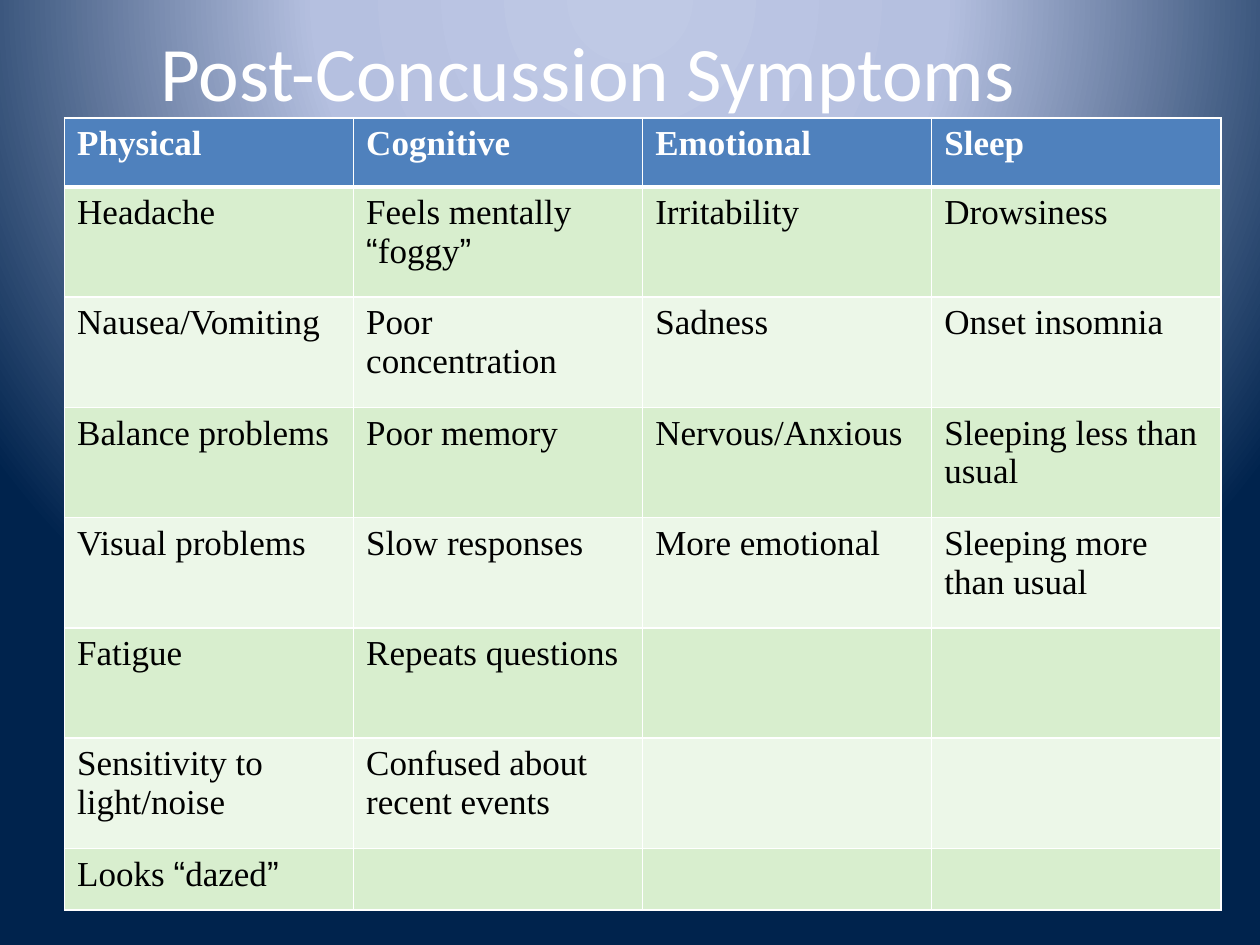
from dataclasses import dataclass
from itertools import groupby

from lxml.etree import SubElement
from pptx import Presentation
from pptx.dml.color import RGBColor
from pptx.enum.text import MSO_ANCHOR, MSO_AUTO_SIZE, PP_ALIGN
from pptx.oxml.ns import qn
from pptx.util import Pt


@dataclass(frozen=True)
class Theme:
    """Colours, fonts and type sizes of the slide."""
    glow: tuple = ((0, "BFC9E5"), (40, "B5C0E0"), (100, "00234D"))
    light: str = "FFFFFF"
    dark: str = "000000"
    header: str = "4F81BD"
    bands: tuple = ("D8EECE", "ECF7E8")
    title_font: str = "Calibri"
    body_font: str = "Times New Roman"
    quote_font: str = "Arial"
    title_size: int = 44
    body_size: int = 20
    thin: int = 1
    thick: int = 3


class SlideBuilder:
    """Draws themed elements on the current slide."""

    def __init__(self, slide, theme):
        self.slide = slide
        self.theme = theme

    def style(self, font, face, size, color, bold=False):
        font.name = face
        font.size = Pt(size)
        font.bold = bold
        font.color.rgb = RGBColor.from_string(color)

    def background(self):
        """Fill the background with a glow centred above the top edge."""
        self.slide.background.fill.gradient()
        gradient = next(self.slide.element.iter(qn("a:gradFill")))
        for part in list(gradient):
            gradient.remove(part)
        stops = SubElement(gradient, qn("a:gsLst"))
        for position, color in self.theme.glow:
            stop = SubElement(stops, qn("a:gs"), pos=str(position * 1000))
            SubElement(stop, qn("a:srgbClr"), val=color)
        circle = SubElement(gradient, qn("a:path"), {"path": "circle"})
        SubElement(circle, qn("a:fillToRect"), l="50000", t="-80000", r="50000", b="180000")

    def title(self, text, left, top, width, height):
        heading = self.slide.shapes.title
        heading.left, heading.top = Pt(left), Pt(top)
        heading.width, heading.height = Pt(width), Pt(height)
        frame = heading.text_frame
        frame.text = text
        frame.word_wrap = True
        frame.auto_size = MSO_AUTO_SIZE.NONE
        frame.vertical_anchor = MSO_ANCHOR.BOTTOM
        frame.margin_top = frame.margin_bottom = 0
        line = frame.paragraphs[0]
        line.alignment = PP_ALIGN.CENTER
        self.style(line.runs[0].font, self.theme.title_font, self.theme.title_size, self.theme.light)

    def border(self, cell, side, weight):
        edge = SubElement(cell._tc.get_or_add_tcPr(), qn(f"a:ln{side}"), w=str(Pt(weight)))
        fill = SubElement(edge, qn("a:solidFill"))
        SubElement(fill, qn("a:srgbClr"), val=self.theme.light)

    def cell(self, cell, text, row):
        """Write one cell, setting curly quotes in their own font."""
        theme = self.theme
        header = row == 0
        weights = {"L": theme.thin, "R": theme.thin,
                   "T": theme.thick if row == 1 else theme.thin,
                   "B": theme.thick if header else theme.thin}
        for side, weight in weights.items():
            self.border(cell, side, weight)
        cell.fill.solid()
        band = theme.header if header else theme.bands[(row - 1) % 2]
        cell.fill.fore_color.rgb = RGBColor.from_string(band)
        line = cell.text_frame.paragraphs[0]
        line.font.size = Pt(theme.body_size)
        for quoted, letters in groupby(text, key=lambda letter: letter in "“”"):
            run = line.add_run()
            run.text = "".join(letters)
            self.style(run.font, theme.quote_font if quoted else theme.body_font,
                       theme.body_size, theme.light if header else theme.dark, header)

    def table(self, columns, left, top, column_width, row_heights):
        count = len(row_heights)
        grid = self.slide.shapes.add_table(
            count, len(columns), Pt(left), Pt(top),
            Pt(column_width * len(columns)), Pt(sum(row_heights))).table
        for row, height in zip(grid.rows, row_heights):
            row.height = Pt(height)
        for index, entries in enumerate(columns):
            grid.columns[index].width = Pt(column_width)
            padded = entries + [""] * (count - len(entries))
            for row, text in enumerate(padded):
                self.cell(grid.cell(row, index), text, row)


SYMPTOMS = [
    ["Physical", "Headache", "Nausea/Vomiting", "Balance problems", "Visual problems",
     "Fatigue", "Sensitivity to light/noise", "Looks “dazed”"],
    ["Cognitive", "Feels mentally “foggy”", "Poor concentration", "Poor memory",
     "Slow responses", "Repeats questions", "Confused about recent events"],
    ["Emotional", "Irritability", "Sadness", "Nervous/Anxious", "More emotional"],
    ["Sleep", "Drowsiness", "Onset insomnia", "Sleeping less than usual",
     "Sleeping more than usual"],
]


def main():
    deck = Presentation()
    deck.slide_width, deck.slide_height = Pt(720), Pt(540)
    builder = SlideBuilder(deck.slides.add_slide(deck.slide_layouts[5]), Theme())
    builder.background()
    builder.title("Post-Concussion Symptoms", 0, 8, 672, 59)
    builder.table(SYMPTOMS, 36.9, 67.5, 165.2, [39.4] + [63] * 6 + [35.2])
    deck.save("out.pptx")


if __name__ == "__main__":
    main()
